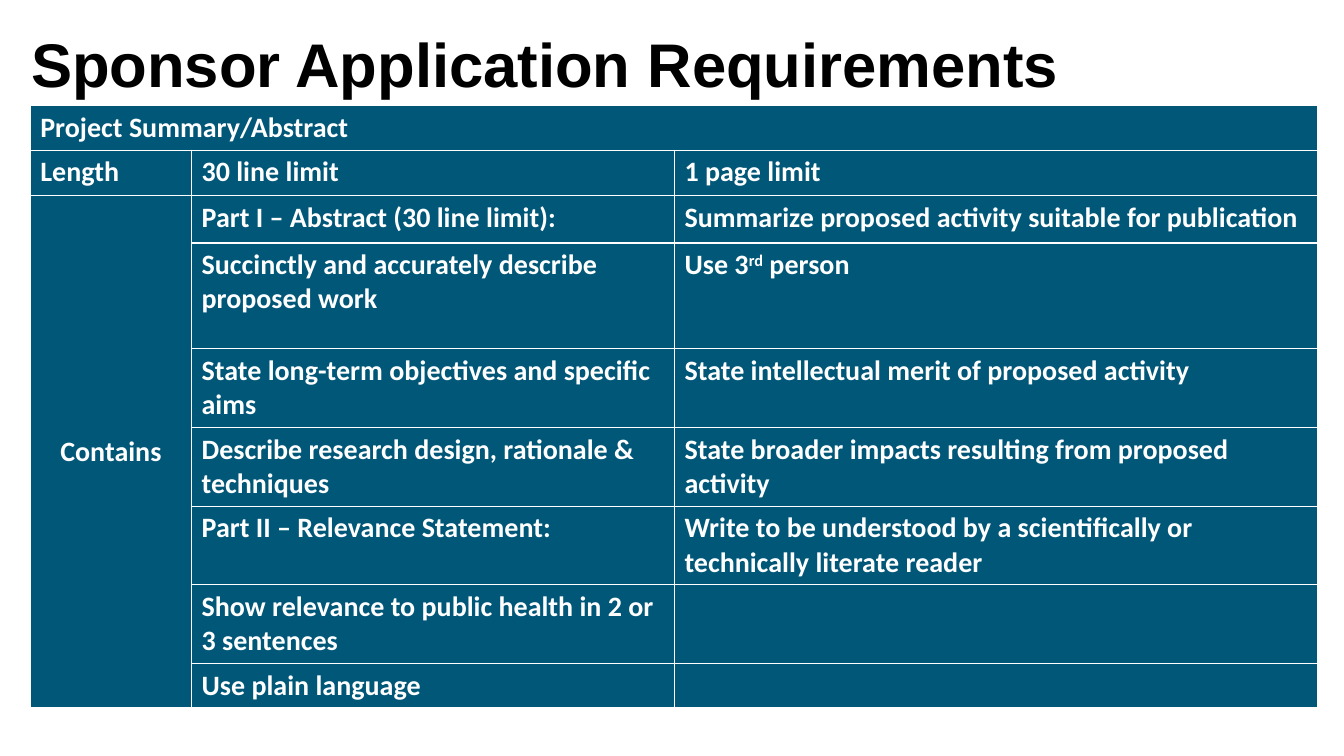
from pptx import Presentation
from pptx.dml.color import RGBColor as RGB
from pptx.enum.text import MSO_ANCHOR as Anchor, PP_ALIGN as Align
from pptx.oxml import parse_xml
from pptx.oxml.ns import nsdecls
from pptx.util import Pt

SCALE = 9144  # EMU in one px, 100 px to the inch
WHITE, BLACK, TEAL = "FFFFFF", "000000", "005778"
HEAD = dict(name="Arial", size=Pt(44), bold=True)
BODY = dict(name="Calibri", size=Pt(20), bold=True)

COLS = [160, 479, 638]
ROWS = [44, 45, 47, 105, 78, 78, 78, 78, 44]
CELLS = [
    ["Project Summary/Abstract", "", ""],
    ["Length", "30 line limit", "1 page limit"],
    ["Contains", "Part I – Abstract (30 line limit):",
     "Summarize proposed activity suitable for publication"],
    ["", "Succinctly and accurately describe proposed work", "Use 3^rd^ person"],
    ["", "State long-term objectives and specific aims",
     "State intellectual merit of proposed activity"],
    ["", "Describe research design, rationale & techniques",
     "State broader impacts resulting from proposed activity"],
    ["", "Part II – Relevance Statement:",
     "Write to be understood by a scientifically or technically literate reader"],
    ["", "Show relevance to public health in 2 or 3 sentences", ""],
    ["", "Use plain language", ""],
]
MERGES = [((0, 0), (0, 2)), ((2, 0), (8, 0))]


def px(num):
    return num * SCALE


def color(code):
    return RGB.from_string(code)


class Deck:
    def __init__(self, wide, high):
        self.prs = Presentation()
        self.prs.slide_width, self.prs.slide_height = px(wide), px(high)
        self.slide = self.prs.slides.add_slide(self.prs.slide_layouts[6])

    def runs(self, para, text, style, ink):
        """Add runs to a paragraph; text between carets is superscript."""
        for i, part in enumerate(text.split("^")):
            if not part:
                continue
            run = para.add_run()
            run.text = part
            for key, val in style.items():
                setattr(run.font, key, val)
            run.font.color.rgb = color(ink)
            if i % 2:
                run._r.get_or_add_rPr().set("baseline", "30000")

    def text(self, box, text, style, ink):
        frame = self.slide.shapes.add_textbox(*map(px, box)).text_frame
        frame.word_wrap = True
        self.runs(frame.paragraphs[0], text, style, ink)

    def edge(self, cell, ink):
        """Draw a 1 pt line on all four sides; must come before the fill."""
        props = cell._tc.get_or_add_tcPr()
        for side in "LRTB":
            props.append(parse_xml(
                f'<a:ln{side} {nsdecls("a")} w="12700"><a:solidFill>'
                f'<a:srgbClr val="{ink}"/></a:solidFill></a:ln{side}>'))

    def table(self, left, top, cols, rows, cells, merges):
        box = map(px, (left, top, sum(cols), sum(rows)))
        grid = self.slide.shapes.add_table(len(rows), len(cols), *box).table
        for col, wide in zip(grid.columns, cols):
            col.width = px(wide)
        for row, high, texts in zip(grid.rows, rows, cells):
            row.height = px(high)
            for cell, text in zip(row.cells, texts):
                self.edge(cell, WHITE)
                cell.fill.solid()
                cell.fill.fore_color.rgb = color(TEAL)
                self.runs(cell.text_frame.paragraphs[0], text, BODY, WHITE)
        for start, end in merges:
            grid.cell(*start).merge(grid.cell(*end))
        return grid

    def save(self):
        self.prs.save("out.pptx")


def main():
    deck = Deck(1333, 750)
    grid = deck.table(30, 105, COLS, ROWS, CELLS, MERGES)
    label = grid.cell(2, 0)
    label.vertical_anchor = Anchor.MIDDLE
    label.text_frame.paragraphs[0].alignment = Align.CENTER
    deck.text((21, 21, 1133, 84), "Sponsor Application Requirements", HEAD, BLACK)
    deck.save()


if __name__ == "__main__":
    main()
